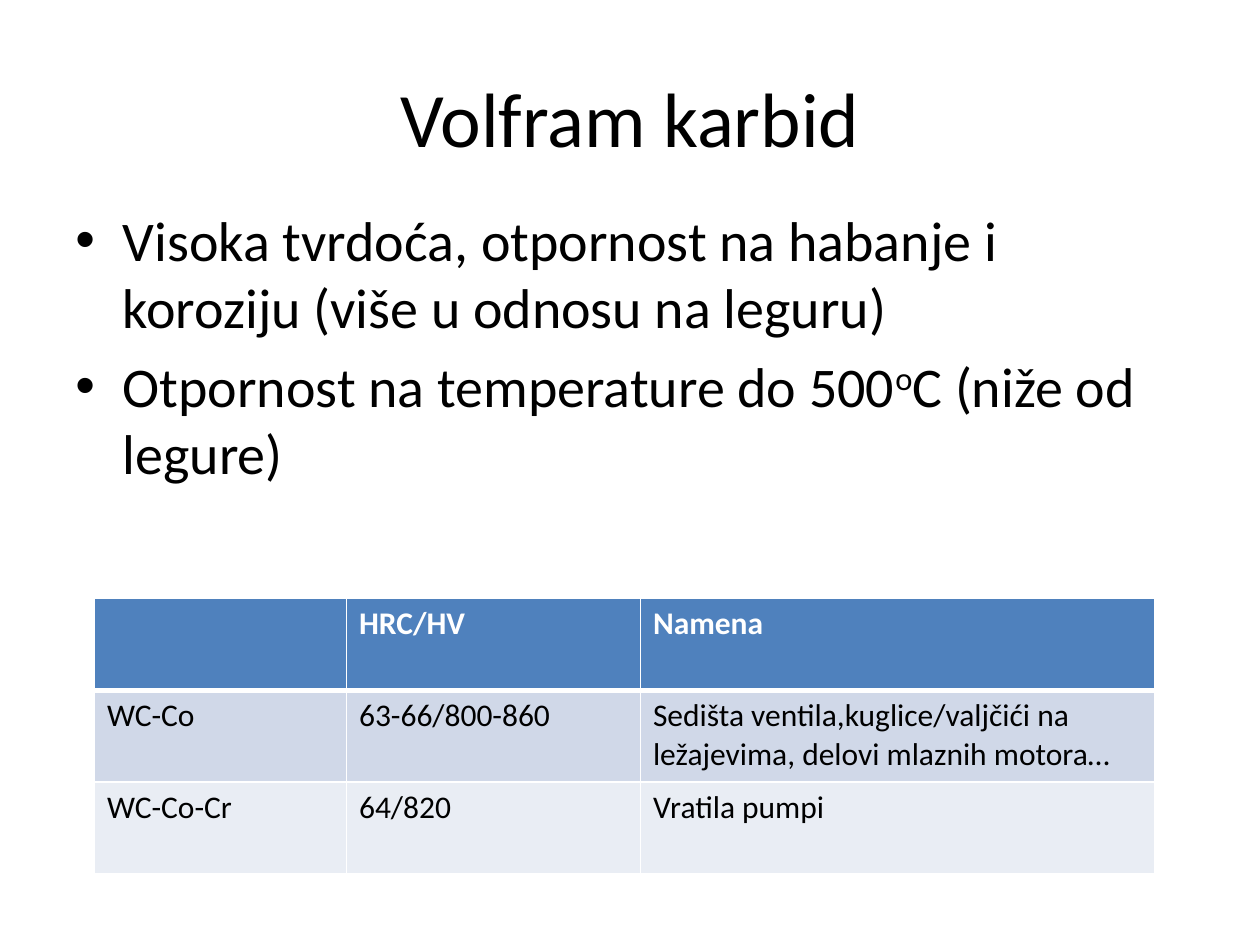
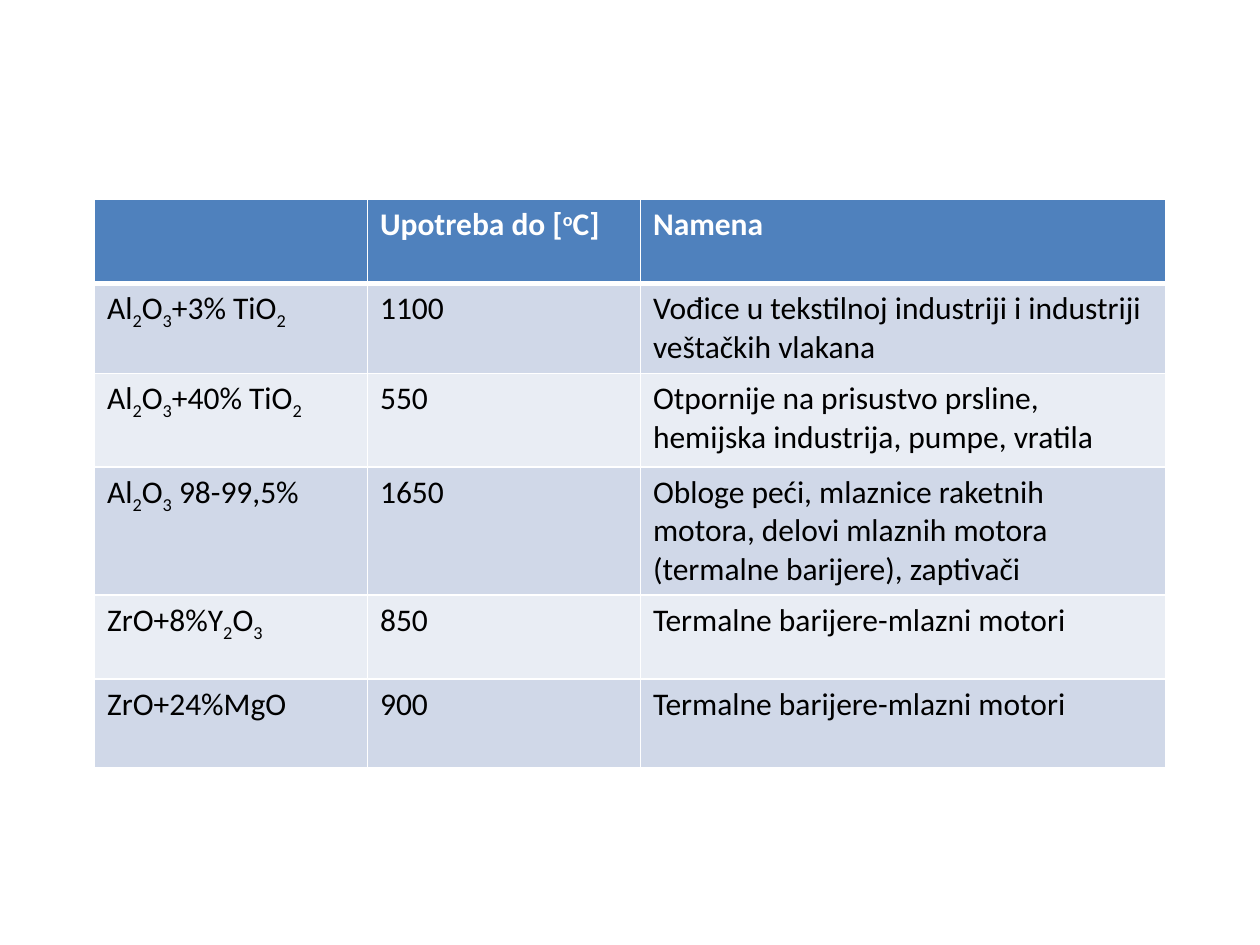
from lxml import etree
from pptx import Presentation
from pptx.dml.color import RGBColor
from pptx.enum.text import MSO_ANCHOR, PP_ALIGN
from pptx.oxml.ns import qn
from pptx.util import Pt

CENTER = PP_ALIGN.CENTER
MIDDLE = MSO_ANCHOR.MIDDLE
TITLE_ONLY, BLANK = 5, 6
FONT = "Calibri"
BLACK, WHITE = "000000", "FFFFFF"
HEADER_FILL = "4F81BD"
ROW_FILLS = ("D0D8E8", "E9EDF4")
SHIFTS = {"^": "30000", "_": "-25000"}

HARDNESS_ROWS = [
    ("", "HRC/HV", "Namena"),
    ("WC-Co", "63-66/800-860",
     "Sedišta ventila,kuglice/valjčići na ležajevima, delovi mlaznih motora…"),
    ("WC-Co-Cr", "64/820", "Vratila pumpi"),
]
CERAMIC_ROWS = [
    ("", "Upotreba do [^o^C]", "Namena"),
    ("Al_2_O_3_+3% TiO_2_", "1100",
     "Vođice u tekstilnoj industriji i industriji veštačkih vlakana"),
    ("Al_2_O_3_+40% TiO_2_", "550",
     "Otpornije na prisustvo prsline, hemijska industrija, pumpe, vratila"),
    ("Al_2_O_3_ 98-99,5%", "1650",
     "Obloge peći, mlaznice raketnih motora, delovi mlaznih motora "
     "(termalne barijere), zaptivači"),
    ("ZrO+8%Y_2_O_3_", "850", "Termalne barijere-mlazni motori"),
    ("ZrO+24%MgO", "900", "Termalne barijere-mlazni motori"),
]


def color(hex_string):
    return RGBColor.from_string(hex_string)


def add_runs(paragraph, text, size, ink=BLACK, bold=False):
    mark = "^" if "^" in text else "_"
    for index, part in enumerate(text.split(mark)):
        if not part:
            continue
        run = paragraph.add_run()
        run.text = part
        run.font.name = FONT
        run.font.size = Pt(size)
        run.font.bold = bold
        run.font.color.rgb = color(ink)
        if index % 2:
            run.font._element.set("baseline", SHIFTS[mark])


def place_title(slide, box, text):
    title = slide.shapes.title
    title.left, title.top, title.width, title.height = map(Pt, box)
    title.text_frame.vertical_anchor = MIDDLE
    paragraph = title.text_frame.paragraphs[0]
    paragraph.alignment = CENTER
    add_runs(paragraph, text, 44)


def add_bullets(slide, box, items, indent=27):
    frame = slide.shapes.add_textbox(*map(Pt, box)).text_frame
    frame.word_wrap = True
    for index, item in enumerate(items):
        paragraph = frame.add_paragraph() if index else frame.paragraphs[0]
        paragraph.space_before = Pt(6.4)
        properties = paragraph._p.get_or_add_pPr()
        properties.set("marL", str(Pt(indent)))
        properties.set("indent", str(-Pt(indent)))
        etree.SubElement(properties, qn("a:buFont"), typeface="Arial")
        etree.SubElement(properties, qn("a:buChar"), char="•")
        add_runs(paragraph, item, 32)


def add_borders(cell, row):
    widths = {"L": 1, "R": 1, "T": 3 if row == 1 else 1, "B": 3 if row == 0 else 1}
    properties = cell._tc.get_or_add_tcPr()
    for side, width in widths.items():
        line = etree.SubElement(properties, qn(f"a:ln{side}"), w=str(Pt(width)))
        fill = etree.SubElement(line, qn("a:solidFill"))
        etree.SubElement(fill, qn("a:srgbClr"), val=WHITE)


def add_material_table(slide, origin, column_widths, row_heights, rows):
    size = sum(column_widths), sum(row_heights)
    table = slide.shapes.add_table(
        len(rows), len(column_widths), *map(Pt, origin + size)).table
    for column, width in zip(table.columns, column_widths):
        column.width = Pt(width)
    for row, (texts, height) in enumerate(zip(rows, row_heights)):
        table.rows[row].height = Pt(height)
        is_header = row == 0
        for column, text in enumerate(texts):
            cell = table.cell(row, column)
            add_borders(cell, row)
            cell.fill.solid()
            cell.fill.fore_color.rgb = color(
                HEADER_FILL if is_header else ROW_FILLS[(row - 1) % 2])
            add_runs(cell.text_frame.paragraphs[0], text, 18,
                     WHITE if is_header else BLACK, is_header)


def build_carbide_slide(deck):
    slide = deck.slides.add_slide(deck.slide_layouts[TITLE_ONLY])
    place_title(slide, (36, 21.6, 648, 90), "Volfram karbid")
    add_bullets(slide, (36, 114, 648, 368.5), [
        "Visoka tvrdoća, otpornost na habanje i koroziju (više u odnosu na leguru)",
        "Otpornost na temperature do 500^o^C (niže od legure)",
    ])
    add_material_table(slide, (54, 342), (144, 168, 294), [52.5] * 3, HARDNESS_ROWS)


def build_ceramics_slide(deck):
    slide = deck.slides.add_slide(deck.slide_layouts[BLANK])
    add_material_table(slide, (54, 114), (156, 156, 300),
                       (48, 51.5, 53.5, 73, 48, 51), CERAMIC_ROWS)


def main():
    deck = Presentation()
    deck.slide_width, deck.slide_height = Pt(720), Pt(540)
    build_carbide_slide(deck)
    build_ceramics_slide(deck)
    deck.save("out.pptx")


if __name__ == "__main__":
    main()
